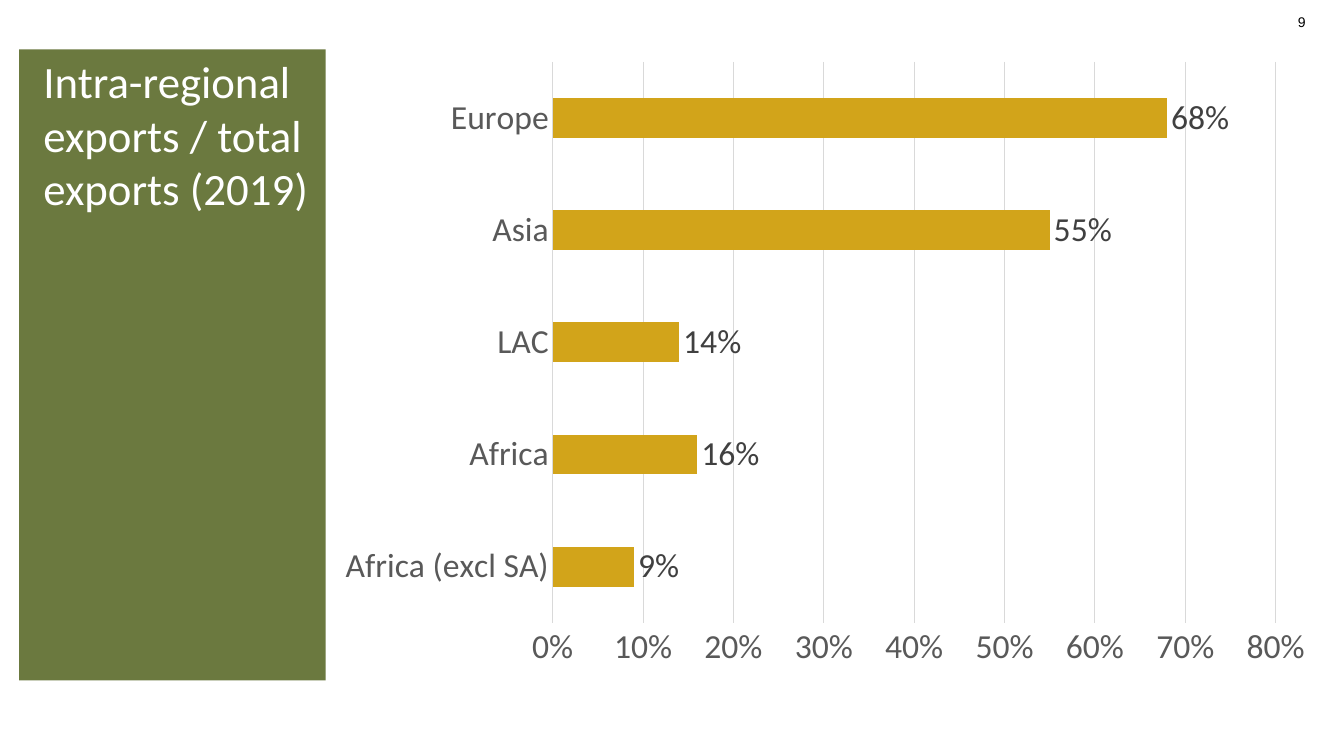
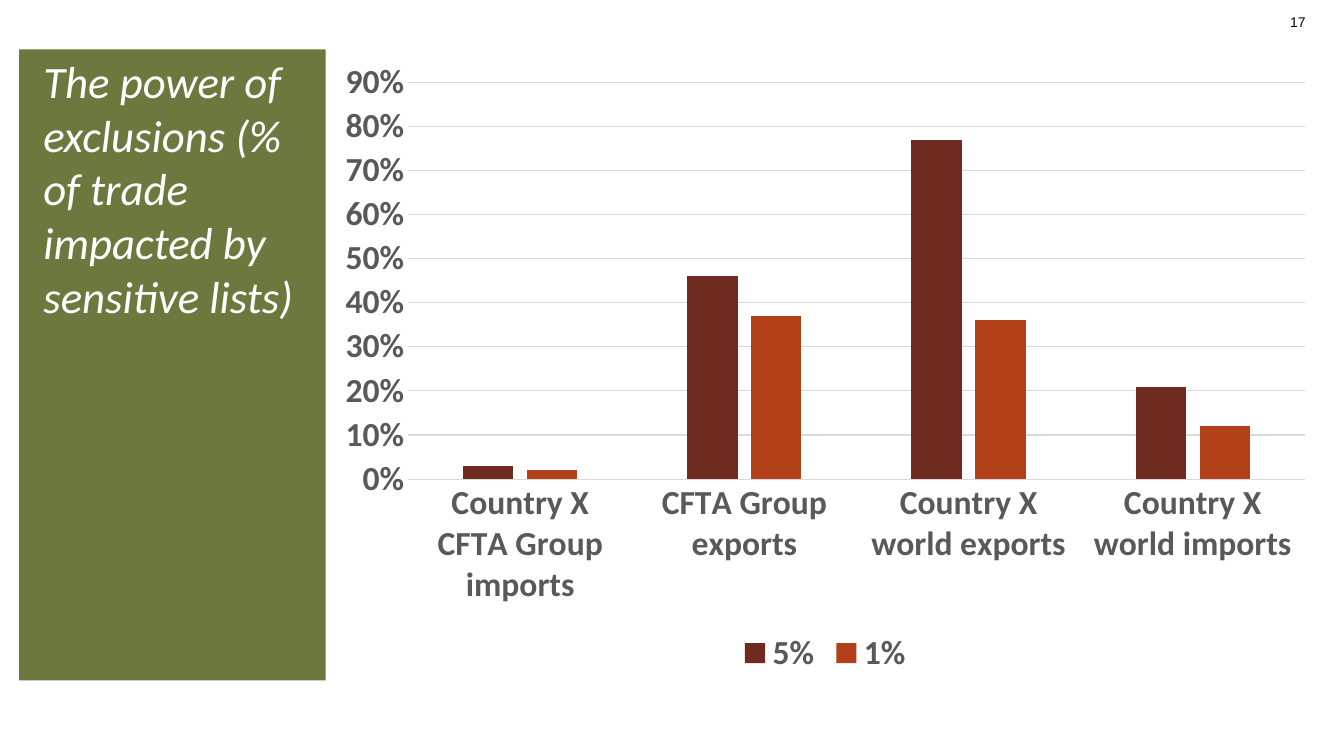
from pptx import Presentation
from pptx.chart.data import CategoryChartData
from pptx.dml.color import RGBColor
from pptx.enum.chart import XL_CHART_TYPE, XL_LABEL_POSITION, XL_LEGEND_POSITION, XL_TICK_MARK
from pptx.enum.text import MSO_ANCHOR, MSO_AUTO_SIZE, PP_ALIGN
from pptx.util import Inches, Pt

OLIVE = RGBColor(0x6B, 0x79, 0x3F)
GOLD = RGBColor(0xD2, 0xA4, 0x1A)
MAROON = RGBColor(0x6F, 0x2B, 0x20)
RUST = RGBColor(0xB2, 0x41, 0x1A)
AXIS_TEXT = RGBColor(0x59, 0x59, 0x59)
LABEL_TEXT = RGBColor(0x40, 0x40, 0x40)
GRID_LINE = RGBColor(0xD9, 0xD9, 0xD9)
WHITE = RGBColor(0xFF, 0xFF, 0xFF)
BLACK = RGBColor(0, 0, 0)

WIDTH, HEIGHT = 13.33, 7.5
MARGIN = 0.19
PANEL_WIDTH = 3.04
CONTENT_TOP, CONTENT_HEIGHT = 0.49, 6.26
CHART_LEFT = MARGIN + PANEL_WIDTH
CHART_WIDTH = WIDTH - MARGIN - CHART_LEFT
TITLE_ONLY = 5

SLIDES = [
    {
        "number": "9",
        "title": "Intra-regional exports / total exports (2019)",
        "italic": False,
        "type": XL_CHART_TYPE.BAR_CLUSTERED,
        "categories": ["Africa (excl SA)", "Africa", "LAC", "Asia", "Europe"],
        "series": [("Series 1", [0.09, 0.16, 0.14, 0.55, 0.68], GOLD)],
        "maximum": 0.8, "gap": 182, "overlap": 0,
        "bold": False, "labels": True, "legend": False,
    },
    {
        "number": "17",
        "title": "The power of exclusions (% of trade impacted by sensitive lists)",
        "italic": True,
        "type": XL_CHART_TYPE.COLUMN_CLUSTERED,
        "categories": ["Country X CFTA Group imports", "CFTA Group exports",
                       "Country X world exports", "Country X world imports"],
        "series": [("5%", [0.03, 0.46, 0.77, 0.21], MAROON),
                   ("1%", [0.02, 0.37, 0.36, 0.12], RUST)],
        "maximum": 0.9, "gap": 219, "overlap": -27,
        "bold": True, "labels": False, "legend": True,
    },
]


def style_font(font, size, color, name="Calibri", bold=False, italic=False):
    font.size = Pt(size)
    font.color.rgb = color
    font.name = name
    font.bold = bold
    font.italic = italic


def style_line(line, color):
    line.color.rgb = color
    line.width = Pt(0.75)


def set_insets(frame, inset):
    frame.margin_left = frame.margin_right = Inches(inset)
    frame.margin_top = frame.margin_bottom = Inches(inset)


def add_slide_number(slide, number):
    box = slide.shapes.add_textbox(Inches(12.48), Inches(0.13), Inches(0.47), Inches(0.17))
    frame = box.text_frame
    frame.word_wrap = True
    frame.vertical_anchor = MSO_ANCHOR.MIDDLE
    set_insets(frame, 0)
    paragraph = frame.paragraphs[0]
    paragraph.text = number
    paragraph.alignment = PP_ALIGN.RIGHT
    style_font(paragraph.font, 10, BLACK, "Arial")


def fill_title_panel(slide, text, italic):
    panel = slide.shapes.title
    panel.left, panel.top = Inches(MARGIN), Inches(CONTENT_TOP)
    panel.width, panel.height = Inches(PANEL_WIDTH), Inches(CONTENT_HEIGHT)
    panel.fill.solid()
    panel.fill.fore_color.rgb = OLIVE
    frame = panel.text_frame
    frame.word_wrap = True
    frame.auto_size = MSO_AUTO_SIZE.NONE
    frame.vertical_anchor = MSO_ANCHOR.TOP
    set_insets(frame, 0.04)
    paragraph = frame.paragraphs[0]
    paragraph.text = text
    paragraph.alignment = PP_ALIGN.LEFT
    paragraph.space_after = Pt(6)
    properties = paragraph._p.get_or_add_pPr()
    properties.set("marL", str(Inches(0.2)))
    properties.set("indent", "0")
    style_font(paragraph.font, 32, WHITE, italic=italic)


def style_axes(chart, content):
    for axis in (chart.category_axis, chart.value_axis):
        axis.major_tick_mark = axis.minor_tick_mark = XL_TICK_MARK.NONE
        style_font(axis.tick_labels.font, 24, AXIS_TEXT, bold=content["bold"])
    style_line(chart.category_axis.format.line, GRID_LINE)
    value_axis = chart.value_axis
    value_axis.format.line.fill.background()
    value_axis.minimum_scale = 0
    value_axis.maximum_scale = content["maximum"]
    value_axis.major_unit = 0.1
    value_axis.tick_labels.number_format = "0%"
    value_axis.tick_labels.number_format_is_linked = False
    style_line(value_axis.major_gridlines.format.line, GRID_LINE)


def add_data_labels(plot):
    plot.has_data_labels = True
    labels = plot.data_labels
    labels.show_value = True
    labels.number_format = "0%"
    labels.number_format_is_linked = False
    labels.position = XL_LABEL_POSITION.OUTSIDE_END
    style_font(labels.font, 24, LABEL_TEXT)


def add_legend(chart, bold):
    chart.has_legend = True
    chart.legend.position = XL_LEGEND_POSITION.BOTTOM
    chart.legend.include_in_layout = False
    style_font(chart.legend.font, 24, AXIS_TEXT, bold=bold)


def add_trade_chart(slide, content):
    data = CategoryChartData(number_format="0%")
    data.categories = content["categories"]
    for name, values, _ in content["series"]:
        data.add_series(name, values)
    chart = slide.shapes.add_chart(
        content["type"], Inches(CHART_LEFT), Inches(CONTENT_TOP),
        Inches(CHART_WIDTH), Inches(CONTENT_HEIGHT), data).chart
    chart.has_title = False
    chart.has_legend = False
    style_font(chart.font, 24, BLACK, bold=content["bold"])
    plot = chart.plots[0]
    plot.vary_by_categories = False
    plot.gap_width = content["gap"]
    plot.overlap = content["overlap"]
    for series, (_, _, color) in zip(plot.series, content["series"]):
        series.format.fill.solid()
        series.format.fill.fore_color.rgb = color
    style_axes(chart, content)
    if content["labels"]:
        add_data_labels(plot)
    if content["legend"]:
        add_legend(chart, content["bold"])


def main():
    presentation = Presentation()
    presentation.slide_width = Inches(WIDTH)
    presentation.slide_height = Inches(HEIGHT)
    for content in SLIDES:
        slide = presentation.slides.add_slide(presentation.slide_layouts[TITLE_ONLY])
        add_slide_number(slide, content["number"])
        fill_title_panel(slide, content["title"], content["italic"])
        add_trade_chart(slide, content)
    presentation.save("out.pptx")


if __name__ == "__main__":
    main()
